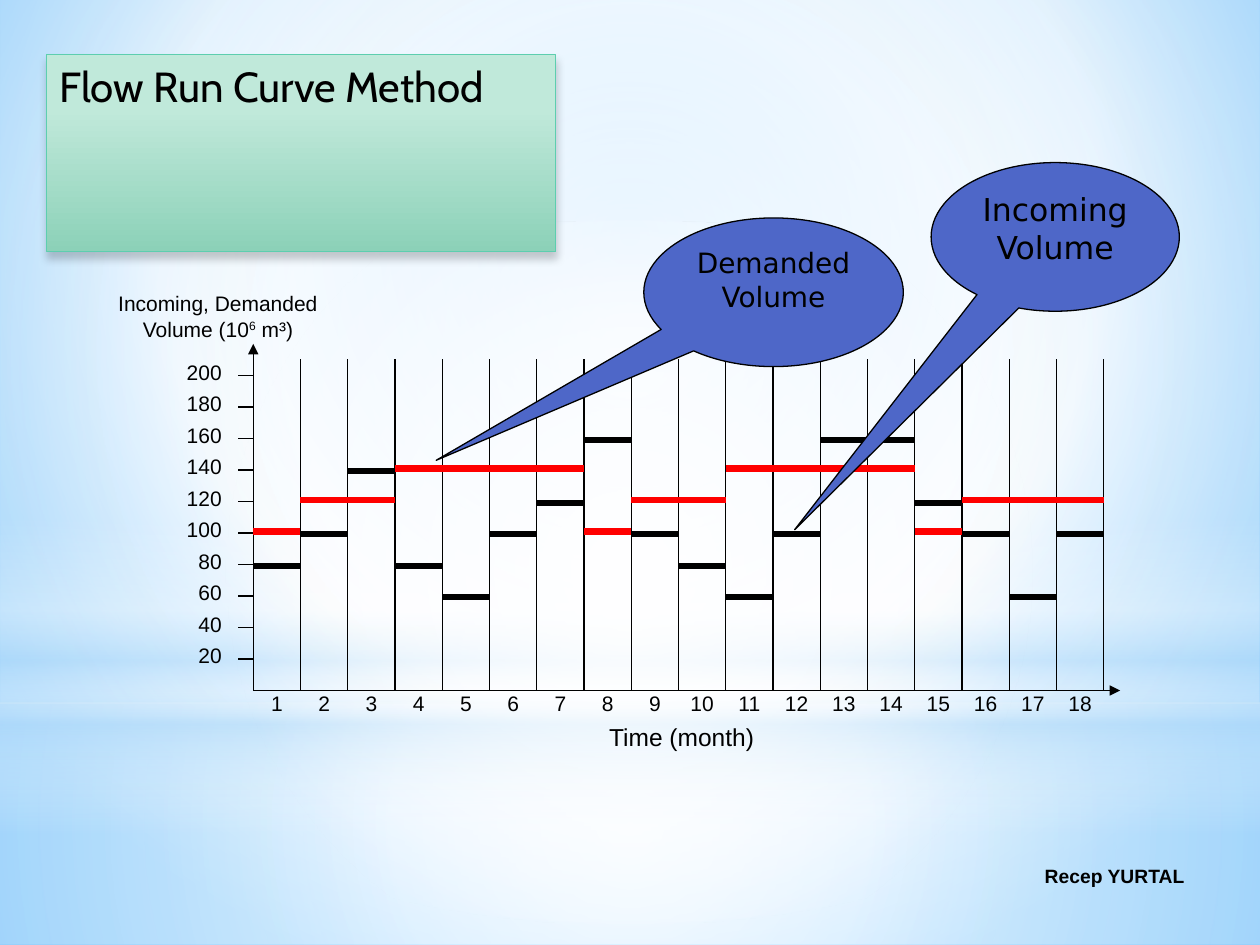
"""Build the flow run curve slide."""
import pptx
import pptx.dml.color
import pptx.enum.shapes
import pptx.enum.text
import pptx.oxml
import pptx.oxml.ns
import pptx.util

Inches = pptx.util.Inches
Pt = pptx.util.Pt
RGBColor = pptx.dml.color.RGBColor
Align = pptx.enum.text.PP_ALIGN
Anchor = pptx.enum.text.MSO_ANCHOR
Shape = pptx.enum.shapes.MSO_SHAPE
qn = pptx.oxml.ns.qn

BLACK = RGBColor(0x00, 0x00, 0x00)
RED = RGBColor(0xFF, 0x00, 0x00)
INDIGO = RGBColor(0x4E, 0x67, 0xC8)
MINT = RGBColor(0x5D, 0xCE, 0xAF)
LIGHT_MINT = RGBColor(0xC0, 0xE9, 0xDA)
DARK_MINT = RGBColor(0x8C, 0xD1, 0xB8)
WHITE = RGBColor(0xFF, 0xFF, 0xFF)
PALE_BLUE = RGBColor(0xB4, 0xDC, 0xFA)
SKY = RGBColor(0x9E, 0xD5, 0xFF)
DEEP_SKY = RGBColor(0x5B, 0xB9, 0xFF)

LEFT, BASE, PLOT_TOP = 2.01, 5.48, 2.85
MONTH_WIDTH, STEP_HEIGHT, STEP = 0.375, 0.25, 20
INCOMING = [80, 100, 140, 80, 60, 100, 120, 160, 100, 80, 60, 100, 160, 160, 120, 100, 60, 100]
DEMANDED = [100, 120, 120, 140, 140, 140, 140, 100, 120, 120, 140, 140, 140, 140, 100, 120, 120, 120]
NO_MARGINS = dict.fromkeys(["margin_left", "margin_top", "margin_right", "margin_bottom"], 0)
CENTER = ("50", "50", "50", "50")


def assign(target, values):
    """Set every attribute in values on target."""
    for name, value in values.items():
        setattr(target, name, value)


def add_xml(parent, markup):
    """Append drawing markup to parent."""
    space = pptx.oxml.ns.nsdecls("a")
    element = pptx.oxml.parse_xml(markup.replace(" ", f" {space} ", 1))
    parent.append(element)
    return element


def paint_gradient(fill, element, stops, focus=None):
    """Fill with color stops, around a focus or from top to bottom."""
    fill.solid()
    solid = next(element.iter(qn("a:solidFill")))
    marks = "".join(
        f'<a:gs pos="{place * 1000}"><a:srgbClr val="{color}">'
        f'<a:alpha val="{opacity * 1000}"/></a:srgbClr></a:gs>'
        for place, color, opacity in stops
    )
    if focus:
        sides = " ".join(f'{side}="{value}000"' for side, value in zip("ltrb", focus))
        course = f'<a:path path="circle"><a:fillToRect {sides}/></a:path>'
    else:
        course = '<a:lin ang="5400000" scaled="0"/>'
    gradient = add_xml(solid.getparent(), f'<a:gradFill rotWithShape="1"><a:gsLst>{marks}</a:gsLst>{course}</a:gradFill>')
    solid.getparent().replace(solid, gradient)


def add_backdrop(page, kind, place, stops, focus=None):
    """Add a borderless gradient shape."""
    shape = page.shapes.add_shape(kind, *map(Inches, place))
    shape.shadow.inherit = False
    paint_gradient(shape.fill, shape.element, stops, focus)
    shape.line.fill.background()


def write_text(shape, pieces, size, align, font="Arial", bold=False, frame=None):
    """Write text pieces, raising every second one."""
    assign(shape.text_frame, {"word_wrap": True, **(frame or {})})
    para = shape.text_frame.paragraphs[0]
    para.alignment = align
    for index, piece in enumerate(pieces):
        span = para.add_run()
        span.text = piece
        assign(span.font, {"name": font, "size": Pt(size), "bold": bold})
        span.font.color.rgb = BLACK
        if index % 2:
            span.font._element.set("baseline", "30000")


def add_label(page, place, pieces, size, align, **options):
    """Add a text box."""
    box = page.shapes.add_textbox(*map(Inches, place))
    write_text(box, pieces, size, align, **options)


def add_line(page, start, end, color=BLACK, width=0.75, arrow=False):
    """Add a straight line, with an arrowhead if wanted."""
    straight = pptx.enum.shapes.MSO_CONNECTOR.STRAIGHT
    line = page.shapes.add_connector(straight, *map(Inches, (*start, *end)))
    line.line.color.rgb = color
    line.line.width = Pt(width)
    if arrow:
        add_xml(line.line._get_or_add_ln(), '<a:tailEnd type="triangle"/>')
    add_xml(line.element.spPr, "<a:effectLst />")


def add_callout(page, place, tip, text, size):
    """Add an oval callout whose tip is relative to its centre."""
    callout = page.shapes.add_shape(Shape.OVAL_CALLOUT, *map(Inches, place))
    callout.shadow.inherit = False
    for index, value in enumerate(tip):
        callout.adjustments[index] = value
    callout.fill.solid()
    callout.fill.fore_color.rgb = INDIGO
    callout.line.color.rgb = BLACK
    callout.line.width = Pt(0.75)
    write_text(callout, [text], size, Align.CENTER, font="DejaVu Sans", frame={"vertical_anchor": Anchor.TOP})


def add_axes(page):
    """Draw the axes, month dividers, ticks and their labels."""
    add_line(page, (LEFT, BASE), (LEFT, 2.73), arrow=True)
    add_line(page, (LEFT, BASE), (8.89, BASE), arrow=True)
    for month in range(1, len(INCOMING) + 1):
        right = LEFT + month * MONTH_WIDTH
        add_line(page, (right, BASE), (right, PLOT_TOP))
        add_label(page, (right - MONTH_WIDTH, BASE, MONTH_WIDTH, 0.38), [str(month)], 12, Align.CENTER, frame=NO_MARGINS)
    for step in range(1, 11):
        height = BASE - step * STEP_HEIGHT
        add_line(page, (LEFT - 0.12, height), (LEFT, height))
        add_label(page, (1.26, height - 0.13, 0.5, 0.38), [str(step * STEP)], 12, Align.RIGHT, frame=NO_MARGINS)


def add_levels(page, volumes, color, width, shift):
    """Draw one level line for each month."""
    for month, volume in enumerate(volumes):
        left = LEFT + month * MONTH_WIDTH
        height = BASE - volume / STEP * STEP_HEIGHT + shift
        add_line(page, (left, height), (left + MONTH_WIDTH, height), color, width)


def add_title(page):
    """Format the title placeholder and bring it to the front."""
    title = page.shapes.title
    place = dict(zip(["left", "top", "width", "height"], map(Inches, (0.37, 0.43, 4.04, 0.5))))
    assign(title, place)
    paint_gradient(title.fill, title.element, [(28, LIGHT_MINT, 100), (100, DARK_MINT, 100)])
    title.line.color.rgb = MINT
    title.line.width = Pt(0.75)
    add_xml(
        title.element.spPr,
        f'<a:effectLst ><a:outerShdw blurRad="{Pt(5)}" dist="{Pt(4)}" dir="5400000" rotWithShape="0">'
        f'<a:srgbClr val="{BLACK}"><a:alpha val="20000"/></a:srgbClr></a:outerShdw></a:effectLst>',
    )
    fit = pptx.enum.text.MSO_AUTO_SIZE.SHAPE_TO_FIT_TEXT
    write_text(title, ["Flow Run Curve Method"], 24, Align.LEFT, font="Cabin", frame={"vertical_anchor": Anchor.TOP, "auto_size": fit})
    title.element.getparent().append(title.element)


def add_background(page):
    """Paint the background and its light bands."""
    paint_gradient(
        page.background.fill, page.element,
        [(0, SKY, 100), (60, WHITE, 100), (100, DEEP_SKY, 100)], (20, 10, 20, 60),
    )
    add_backdrop(page, Shape.RECTANGLE, (0, 5.58, 10, 1.92), [(0, WHITE, 91), (37, WHITE, 76), (100, PALE_BLUE, 79)], CENTER)
    add_backdrop(page, Shape.RECTANGLE, (0, 0, 10, 5.58), [(0, WHITE, 89), (48, WHITE, 62), (100, PALE_BLUE, 79)], CENTER)
    band = [(0, WHITE, 0), (29, WHITE, 30), (45, PALE_BLUE, 40), (55, WHITE, 26), (65, PALE_BLUE, 60), (100, WHITE, 0)]
    add_backdrop(page, Shape.RECTANGLE, (0, 4.12, 10, 2.5), band)
    add_backdrop(page, Shape.OVAL, (0, 1.75, 10, 5.58), [(0, WHITE, 100), (56, WHITE, 0)], CENTER)


def main():
    """Build and save the deck."""
    deck = pptx.Presentation()
    assign(deck, {"slide_width": Inches(10), "slide_height": Inches(7.5)})
    page = deck.slides.add_slide(deck.slide_layouts[5])
    add_background(page)
    add_label(page, (6.75, 6.75, 2.75, 0.4), ["Recep YURTAL"], 11, Align.RIGHT, bold=True, frame={"vertical_anchor": Anchor.MIDDLE})
    add_axes(page)
    add_levels(page, INCOMING, BLACK, 3.5, 0.01)
    add_levels(page, DEMANDED, RED, 3.75, -0.01)
    add_callout(page, (7.39, 1.29, 1.97, 1.18), (-1.05, 1.97), "Incoming Volume", 18)
    add_callout(page, (5.11, 1.73, 2.06, 1.18), (-1.3, 1.13), "Demanded Volume", 16)
    add_label(page, (0.67, 2.26, 2.12, 0.55), ["Incoming, Demanded Volume (10", "6", " m³)"], 12, Align.CENTER)
    add_label(page, (4.64, 5.68, 1.54, 0.44), ["Time (month)"], 14, Align.CENTER)
    add_title(page)
    deck.save("out.pptx")


if __name__ == "__main__":
    main()
